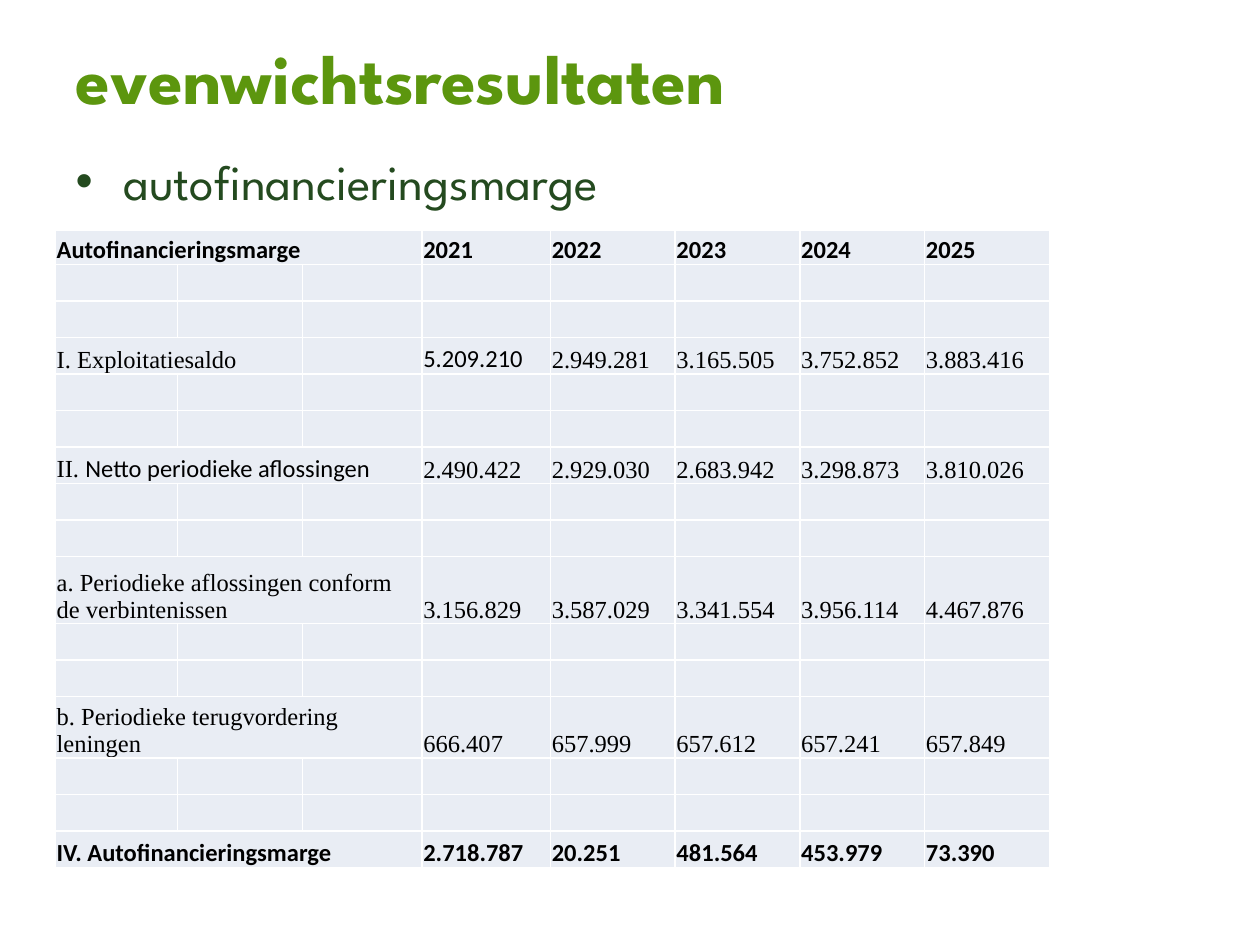
import pptx
import pptx.dml.color
import pptx.enum.text
import pptx.oxml
import pptx.oxml.ns
import pptx.util
from pptx.util import Inches

GREEN = pptx.dml.color.RGBColor(0x5C, 0x96, 0x0E)
DARK_GREEN = pptx.dml.color.RGBColor(0x24, 0x4A, 0x1F)
BLACK = pptx.dml.color.RGBColor(0, 0, 0)
WHITE = pptx.dml.color.RGBColor(0xFF, 0xFF, 0xFF)
CELL_FILL = pptx.dml.color.RGBColor(0xE9, 0xED, 0xF4)

SPARTAN, SANS, SERIF = "League Spartan", "Calibri", "Times New Roman"
CELL_SIZE = pptx.util.Pt(14)
ANCHOR = pptx.enum.text.MSO_ANCHOR

COL_WIDTHS = [0.97, 0.99, 0.95, 1.02] + [0.99] * 4
ROW_COUNT = 16
ROW_HEIGHT = 0.29
SPECIAL_HEIGHTS = {0: 0.27, 9: 0.53, 12: 0.49}
ROW_STEP = 3  # two empty rows follow each filled row
FIRST_VALUE_COL = 3

# Label runs, columns the label spans, values, value font, bold
ROWS = [
    ([("Autofinancieringsmarge", SANS)], 3,
     ["2021", "2022", "2023", "2024", "2025"], SANS, True),
    ([("I. Exploitatiesaldo", SERIF)], 2,
     ["5.209.210", "2.949.281", "3.165.505", "3.752.852", "3.883.416"], SERIF, False),
    ([("II. ", SERIF), ("Netto periodieke aflossingen", SANS)], 3,
     ["2.490.422", "2.929.030", "2.683.942", "3.298.873", "3.810.026"], SERIF, False),
    ([("a. Periodieke aflossingen conform de verbintenissen", SERIF)], 3,
     ["3.156.829", "3.587.029", "3.341.554", "3.956.114", "4.467.876"], SERIF, False),
    ([("b. Periodieke terugvordering leningen", SERIF)], 3,
     ["666.407", "657.999", "657.612", "657.241", "657.849"], SERIF, False),
    ([("IV. Autofinancieringsmarge", SANS)], 3,
     ["2.718.787", "20.251", "481.564", "453.979", "73.390"], SANS, True),
]
SANS_VALUES = {"5.209.210"}


def set_attrs(obj, values):
    for name, value in values.items():
        setattr(obj, name, value)


def add_run(p, text, color, **font):
    r = p.add_run()
    r.text = text
    set_attrs(r.font, font)
    r.font.color.rgb = color


def place(sp, left, top, width, height):
    set_attrs(sp, {"left": Inches(left), "top": Inches(top),
                   "width": Inches(width), "height": Inches(height)})
    set_attrs(sp.text_frame, {"word_wrap": True,
                              "auto_size": pptx.enum.text.MSO_AUTO_SIZE.NONE})


def fill_title(sp):
    place(sp, 0.5, 0.3, 8.2, 0.61)
    sp.text_frame.vertical_anchor = ANCHOR.MIDDLE
    p = sp.text_frame.paragraphs[0]
    p.alignment = pptx.enum.text.PP_ALIGN.LEFT
    add_run(p, "evenwichtsresultaten", GREEN,
            size=pptx.util.Pt(40), name=SPARTAN, bold=True)


def fill_body(sp):
    place(sp, 0.5, 1.07, 8.2, 5.63)
    sp.text_frame.margin_top = Inches(0.13)
    p = sp.text_frame.paragraphs[0]
    p.space_before = pptx.util.Pt(0)
    pPr = p._p.get_or_add_pPr()
    pPr.set("marL", str(Inches(0.38)))
    pPr.set("indent", str(-Inches(0.38)))
    ns = pptx.oxml.ns.nsdecls("a")
    pPr.append(pptx.oxml.parse_xml(f'<a:buFont {ns} typeface="Arial"/>'))
    pPr.append(pptx.oxml.parse_xml(f'<a:buChar {ns} char="•"/>'))
    add_run(p, "autofinancieringsmarge", DARK_GREEN,
            size=pptx.util.Pt(28), name=SPARTAN)


def format_cell(cell):
    tcPr = cell._tc.get_or_add_tcPr()
    for side in ("lnL", "lnR", "lnT", "lnB"):
        tcPr.append(pptx.oxml.parse_xml(
            f'<a:{side} {pptx.oxml.ns.nsdecls("a")} w="{pptx.util.Pt(1)}">'
            f'<a:solidFill><a:srgbClr val="{WHITE}"/></a:solidFill></a:{side}>'))
    cell.fill.solid()
    cell.fill.fore_color.rgb = CELL_FILL
    set_attrs(cell, {"margin_left": Inches(0.01), "margin_right": Inches(0.01),
                     "margin_top": Inches(0.01), "margin_bottom": 0,
                     "vertical_anchor": ANCHOR.BOTTOM})
    # Keeps empty rows from growing
    end = cell.text_frame.paragraphs[0]._p.get_or_add_endParaRPr()
    end.set("sz", str(int(CELL_SIZE.pt * 100)))


def write_cell(cell, runs, bold):
    p = cell.text_frame.paragraphs[0]
    for text, font in runs:
        add_run(p, text, BLACK, size=CELL_SIZE, name=font, bold=bold)


def add_margin_table(s):
    heights = [SPECIAL_HEIGHTS.get(i, ROW_HEIGHT) for i in range(ROW_COUNT)]
    table = s.shapes.add_table(
        ROW_COUNT, len(COL_WIDTHS), Inches(0.44), Inches(1.83),
        Inches(sum(COL_WIDTHS)), Inches(sum(heights))).table
    set_attrs(table, {"first_row": False, "horz_banding": False})
    for column, width in zip(table.columns, COL_WIDTHS):
        column.width = Inches(width)
    for row, height in zip(table.rows, heights):
        row.height = Inches(height)
    for cell in table.iter_cells():
        format_cell(cell)

    for i, (label, span, values, font, bold) in enumerate(ROWS):
        row = i * ROW_STEP
        table.cell(row, 0).merge(table.cell(row, span - 1))
        write_cell(table.cell(row, 0), label, bold)
        for col, value in enumerate(values, FIRST_VALUE_COL):
            value_font = SANS if value in SANS_VALUES else font
            write_cell(table.cell(row, col), [(value, value_font)], bold)


def main():
    prs = pptx.Presentation()
    set_attrs(prs, {"slide_width": Inches(10), "slide_height": Inches(7.5)})
    s = prs.slides.add_slide(prs.slide_layouts[1])
    # Heading and bullet
    fill_title(s.shapes.title)
    fill_body(s.placeholders[1])
    # Figures per year
    add_margin_table(s)
    prs.save("out.pptx")


if __name__ == "__main__":
    main()
